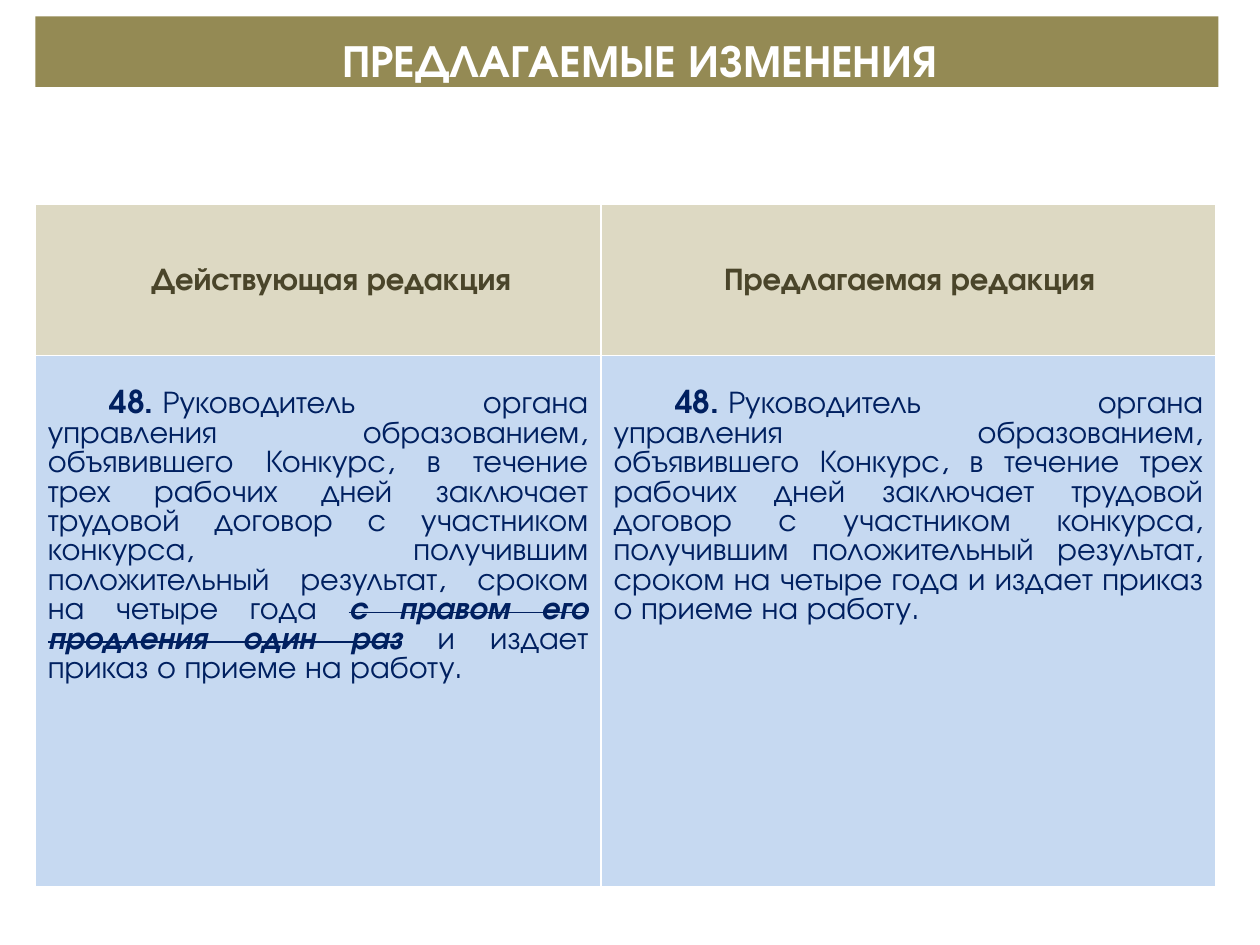
from lxml.etree import SubElement
from pptx import Presentation
from pptx.dml.color import RGBColor
from pptx.enum.text import MSO_ANCHOR as Anchor, MSO_AUTO_SIZE as AutoSize, PP_ALIGN as Align
from pptx.oxml.ns import qn
from pptx.util import Inches, Pt

FONT = "TeX Gyre Adventor"
LEFT = 0.28
COLS = (4.49, 4.88)
ROWS = (1.2, 4.22)
HEADINGS = ("Действующая редакция", "Предлагаемая редакция")
NUMBER = ("48.\u00a0", {"bold": True})
RULE = ("Руководитель органа управления образованием, объявившего Конкурс, "
        "в течение трех рабочих дней заключает трудовой договор с участником "
        "конкурса, получившим положительный результат, сроком на четыре года ")
ENDING = "и издает приказ о приеме на работу."
STRUCK = {"bold": True, "italic": True, "strike": True}
CURRENT = [NUMBER, (RULE, {}), ("с правом его продления один раз", STRUCK), (" " + ENDING, {})]
PROPOSED = [NUMBER, (RULE + ENDING, {})]


def rgb(color):
    return RGBColor.from_string(color)


def paint(target, color):
    target.fill.solid()
    target.fill.fore_color.rgb = rgb(color)


def set_attrs(target, values):
    for name, value in values.items():
        setattr(target, name, value)


def add_run(p, text, size, color, bold=False, italic=False, strike=False):
    r = p.add_run()
    r.text = text
    set_attrs(r.font, {"name": FONT, "size": Pt(size), "bold": bold, "italic": italic})
    r.font.color.rgb = rgb(color)
    if strike:
        r.font._element.set("strike", "sngStrike")


def indent(p, margin, first):
    pPr = p._p.get_or_add_pPr()
    pPr.set("marL", str(Inches(margin)))
    pPr.set("indent", str(Inches(first)))


def add_title(s, text):
    sp = s.shapes.title
    set_attrs(sp, {"left": Inches(LEFT), "top": Inches(0.13),
                   "width": Inches(9.39), "height": Inches(0.56)})
    paint(sp, "948A54")
    tf = sp.text_frame
    set_attrs(tf, {"auto_size": AutoSize.NONE, "word_wrap": True,
                   "vertical_anchor": Anchor.BOTTOM, "margin_bottom": 0})
    p = tf.paragraphs[0]
    set_attrs(p, {"alignment": Align.CENTER, "line_spacing": 1.15})
    indent(p, 0.01, 0.2)
    add_run(p, text, 26, "FFFFFF", bold=True)


def add_borders(cell, color, width):
    tcPr = cell._tc.get_or_add_tcPr()
    for side in ("a:lnL", "a:lnR", "a:lnT", "a:lnB"):
        ln = SubElement(tcPr, qn(side), w=str(Pt(width)))
        SubElement(SubElement(ln, qn("a:solidFill")), qn("a:srgbClr"), val=color)


def fill_heading(cell, text, margin, first):
    add_borders(cell, "FFFFFF", 1)
    paint(cell, "DDD9C3")
    set_attrs(cell, {"vertical_anchor": Anchor.MIDDLE, "margin_left": Inches(0.07),
                     "margin_right": Inches(0.07), "margin_top": 0, "margin_bottom": 0})
    p = cell.text_frame.paragraphs[0]
    set_attrs(p, {"alignment": Align.CENTER, "line_spacing": 1.15})
    indent(p, margin, first)
    add_run(p, text, 18, "4A452A", bold=True)


def fill_wording(cell, runs):
    add_borders(cell, "FFFFFF", 1)
    paint(cell, "C6D9F1")
    cell.margin_top = Inches(0.28)
    p = cell.text_frame.paragraphs[0]
    p.alignment = Align.JUSTIFY
    indent(p, 0, 0.49)
    for text, values in runs:
        add_run(p, text, 18, "002060", **values)


def add_comparison(s):
    frame = s.shapes.add_table(len(ROWS), len(COLS), Inches(LEFT), Inches(1.62),
                               Inches(sum(COLS)), Inches(sum(ROWS)))
    table = frame.table
    for column, width in zip(table.columns, COLS):
        column.width = Inches(width)
    for row, height in zip(table.rows, ROWS):
        row.height = Inches(height)
    indents = ((0.01, 0.2), (0.02, 0))
    for i, (heading, runs) in enumerate(zip(HEADINGS, (CURRENT, PROPOSED))):
        fill_heading(table.cell(0, i), heading, *indents[i])
        fill_wording(table.cell(1, i), runs)


def main():
    prs = Presentation()
    set_attrs(prs, {"slide_width": Inches(10), "slide_height": Inches(7.5)})
    s = prs.slides.add_slide(prs.slide_layouts[5])
    add_title(s, "ПРЕДЛАГАЕМЫЕ ИЗМЕНЕНИЯ")
    add_comparison(s)
    prs.save("out.pptx")


if __name__ == "__main__":
    main()
